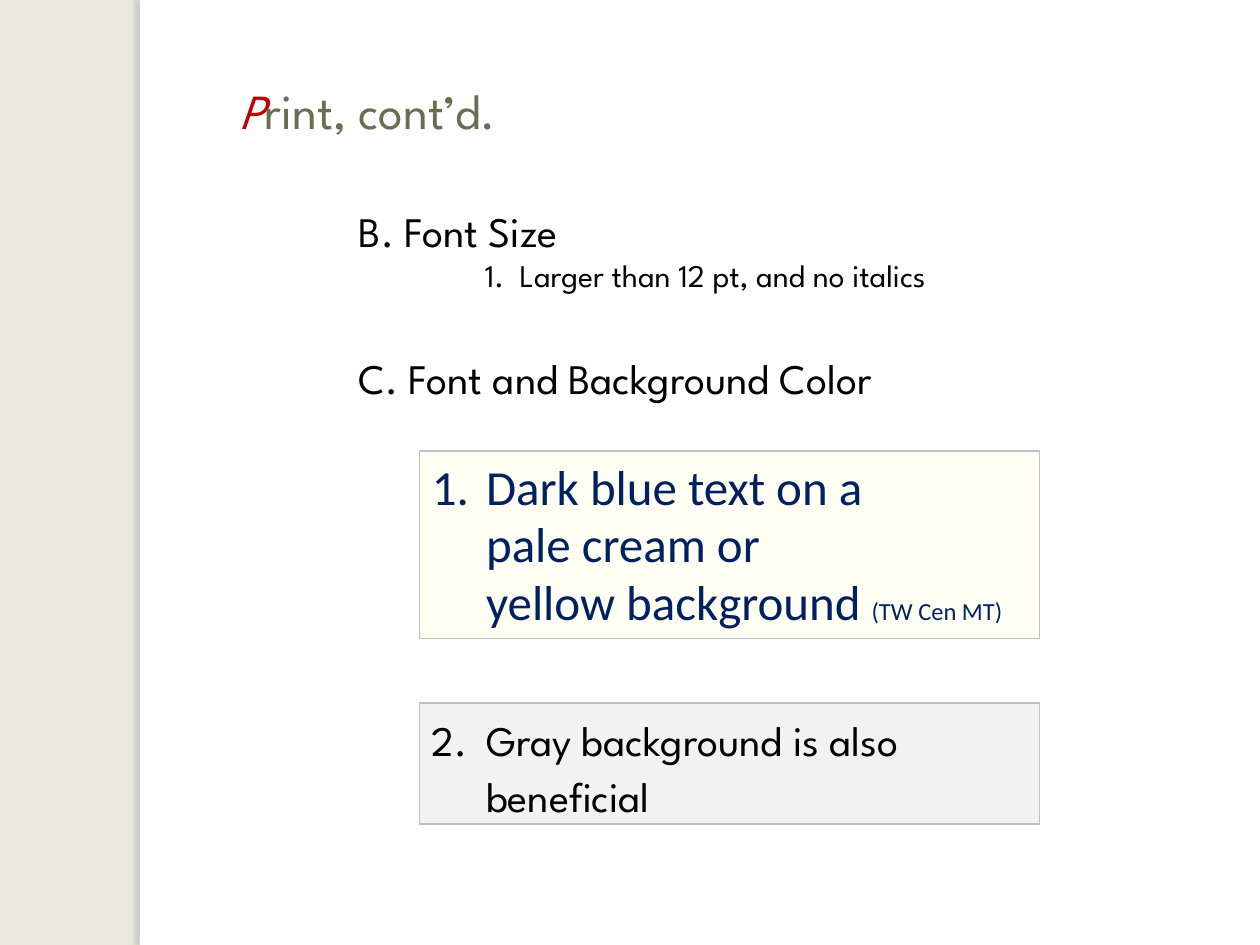
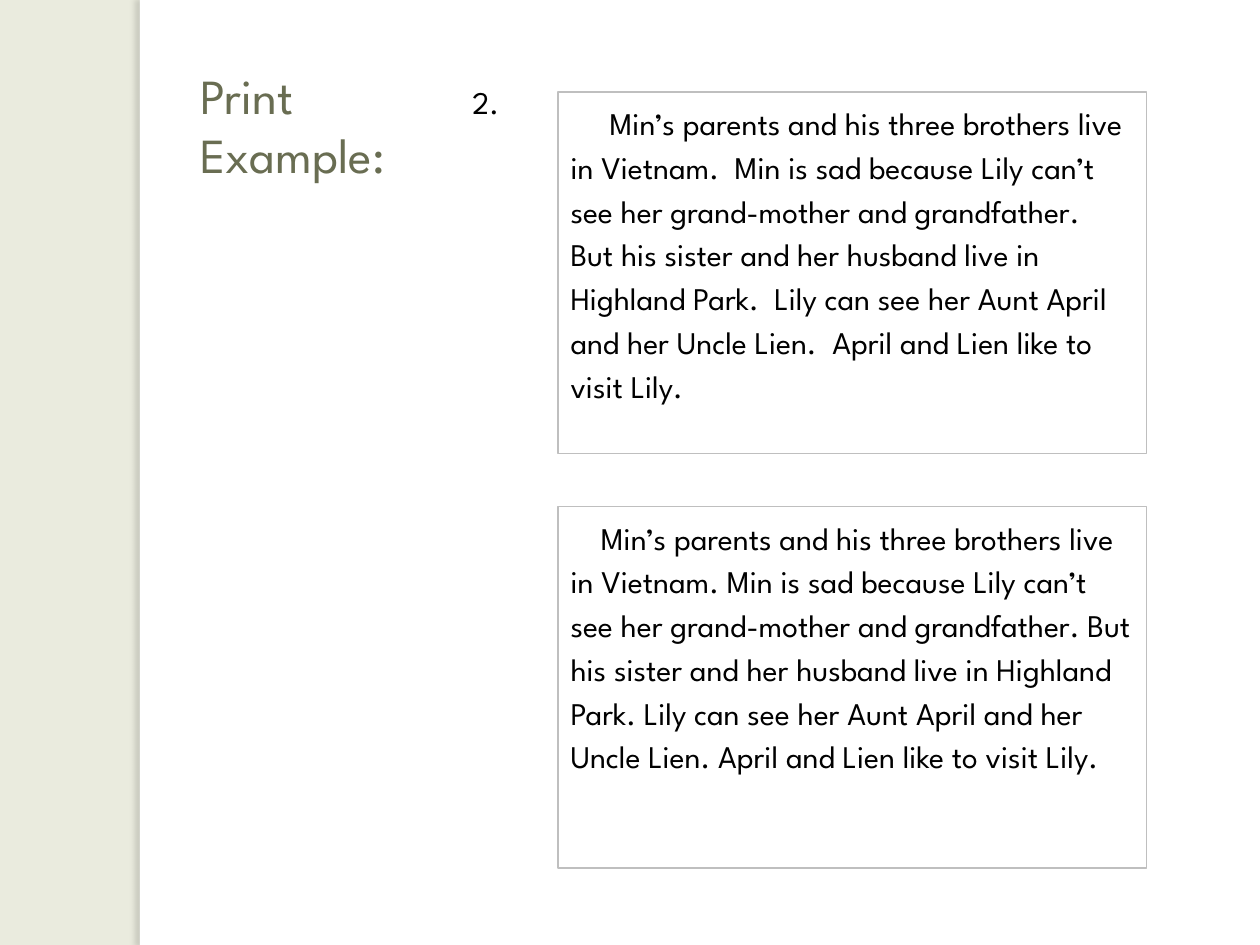
import lxml.etree
import pptx
import pptx.dml.color
import pptx.enum.shapes
import pptx.enum.text
import pptx.oxml.ns
import pptx.util

Inches = pptx.util.Inches
Pt = pptx.util.Pt
RGBColor = pptx.dml.color.RGBColor
ALIGN = pptx.enum.text.PP_ALIGN
ANCHOR = pptx.enum.text.MSO_ANCHOR

SAND = RGBColor(0xEA, 0xEB, 0xDE)
WHITE = RGBColor(0xFF, 0xFF, 0xFF)
SHADE = RGBColor(0x75, 0x75, 0x6E)
OLIVE = RGBColor(0x69, 0x6D, 0x52)
RED = RGBColor(0xC0, 0x00, 0x00)
BLACK = RGBColor(0x00, 0x00, 0x00)
NAVY = RGBColor(0x00, 0x20, 0x60)
CREAM = RGBColor(0xFF, 0xFF, 0xF3)
PALE = RGBColor(0xF2, 0xF2, 0xF2)
GRAY = RGBColor(0xBF, 0xBF, 0xBF)

SPARTAN = "League Spartan"
TITLE = {"name": SPARTAN, "size": Pt(28), "italic": False}
HEAD = {"name": SPARTAN, "size": Pt(24)}
BODY = {"name": SPARTAN, "size": Pt(18)}
LARGE = {"name": "Calibri", "size": Pt(28)}
SMALL = {"name": "Calibri", "size": Pt(14)}

STORY = (
    "Min’s parents and his three brothers live in Vietnam.  "
    "Min is sad because Lily can’t see her grand-mother and grandfather.  "
    "But his sister and her husband live in Highland Park.  "
    "Lily can see her Aunt April and her Uncle Lien.  "
    "April and Lien like to visit Lily."
)


def apply(target, values):
    for key, value in values.items():
        setattr(target, key, value)


def write(para, text, style, color=BLACK):
    for index, line in enumerate(text.split("\n")):
        if index:
            para.add_line_break()
        run = para.add_run()
        run.text = line
        apply(run.font, style)
        run.font.color.rgb = color


def indent(para, left, first):
    props = para._p.get_or_add_pPr()
    props.set("marL", str(Inches(left)))
    props.set("indent", str(Inches(first)))


def add_rect(slide, place, fill=None, line=None, width=0.75):
    kind = pptx.enum.shapes.MSO_SHAPE.RECTANGLE
    rect = slide.shapes.add_shape(kind, *map(Inches, place))
    rect.shadow.inherit = False
    if fill is None:
        rect.fill.background()
    else:
        rect.fill.solid()
        rect.fill.fore_color.rgb = fill
    if line is None:
        rect.line.fill.background()
    else:
        rect.line.color.rgb = line
        rect.line.width = Pt(width)
    return rect


def add_shade(shape):
    qn = pptx.oxml.ns.qn
    sub = lxml.etree.SubElement
    effects = shape.element.spPr.find(qn("a:effectLst"))
    outer = sub(effects, qn("a:outerShdw"), blurRad=str(Pt(3)),
                dist=str(Pt(3)), dir="10800000", rotWithShape="0")
    color = sub(outer, qn("a:srgbClr"), val=str(SHADE))
    sub(color, qn("a:alpha"), val="25000")


def add_slide(deck, place, parts):
    slide = deck.slides.add_slide(deck.slide_layouts[5])
    title = slide.shapes.title
    panel = add_rect(slide, (1.11, 0, 8.89, 7.5), WHITE)
    edge = add_rect(slide, (1.11, 0, 0.08, 7.5), WHITE)
    add_shade(edge)
    for shape in (panel, edge):
        title.element.addprevious(shape.element)
    apply(title, dict(zip(("left", "top", "width", "height"), map(Inches, place))))
    apply(title.text_frame, {"word_wrap": True, "vertical_anchor": ANCHOR.MIDDLE,
                             "auto_size": pptx.enum.text.MSO_AUTO_SIZE.NONE})
    para = title.text_frame.paragraphs[0]
    para.alignment = ALIGN.LEFT
    for text, style, color in parts:
        write(para, text, style, color)
    return slide


def add_text(slide, place, text, style, align=ALIGN.LEFT, anchor=ANCHOR.TOP):
    frame = slide.shapes.add_textbox(*map(Inches, place)).text_frame
    apply(frame, {"word_wrap": True, "vertical_anchor": anchor})
    para = frame.paragraphs[0]
    para.alignment = align
    write(para, text, style)
    return frame


def add_card(slide, place, parts, pitch, left, first, **look):
    card = add_rect(slide, place, line=GRAY, **look)
    apply(card.text_frame, {"word_wrap": True, "vertical_anchor": ANCHOR.TOP})
    para = card.text_frame.paragraphs[0]
    apply(para, {"alignment": ALIGN.LEFT, "line_spacing": Pt(pitch)})
    indent(para, left, first)
    for text, style, color in parts:
        write(para, text, style, color)


def add_rules(deck):
    slide = add_slide(deck, (1.8, 0.25, 8.2, 1.25), [
        ("P", {**TITLE, "italic": True}, RED),
        ("rint, cont’d.", TITLE, OLIVE),
    ])
    add_text(slide, (2.75, 2.75, 5.75, 0.5), "C. Font and Background Color", HEAD)
    add_card(slide, (3.33, 3.58, 4.92, 1.49), [
        ("1.\tDark blue text on a\npale cream or\nyellow background ", LARGE, NAVY),
        ("(TW Cen MT)", SMALL, NAVY),
    ], 33, 0.43, -0.43, fill=CREAM)
    add_card(slide, (3.33, 5.58, 4.92, 0.96), [
        ("2.\tGray background is also\nbeneficial", HEAD, BLACK),
    ], 32, 0.43, -0.43, fill=PALE)
    frame = add_text(slide, (2.75, 1.58, 6.42, 0.81), "B. Font Size", HEAD)
    para = frame.add_paragraph()
    indent(para, 1, 0)
    write(para, "1.  Larger than 12 pt, and no italics", BODY)


def add_sample(deck):
    slide = add_slide(deck, (1.49, 0.31, 2.26, 1.35),
                      [("Print\nExample:", TITLE, OLIVE)])
    tales = ((STORY, 0.31), (STORY.replace("  ", " "), 0.24))
    for row, (tale, first) in enumerate(tales):
        add_card(slide, (4.43, 0.73 + row * 3.29, 4.67, 2.87),
                 [(tale, BODY, BLACK)], 25, 0, first, width=1)
    add_text(slide, (3.28, 0.6, 1.15, 0.41), "2.", BODY, ALIGN.CENTER, ANCHOR.MIDDLE)


def main():
    deck = pptx.Presentation()
    apply(deck, {"slide_width": Inches(10), "slide_height": Inches(7.5)})
    ground = deck.slide_master.background.fill
    ground.solid()
    ground.fore_color.rgb = SAND
    add_rules(deck)
    add_sample(deck)
    deck.save("out.pptx")


if __name__ == "__main__":
    main()
